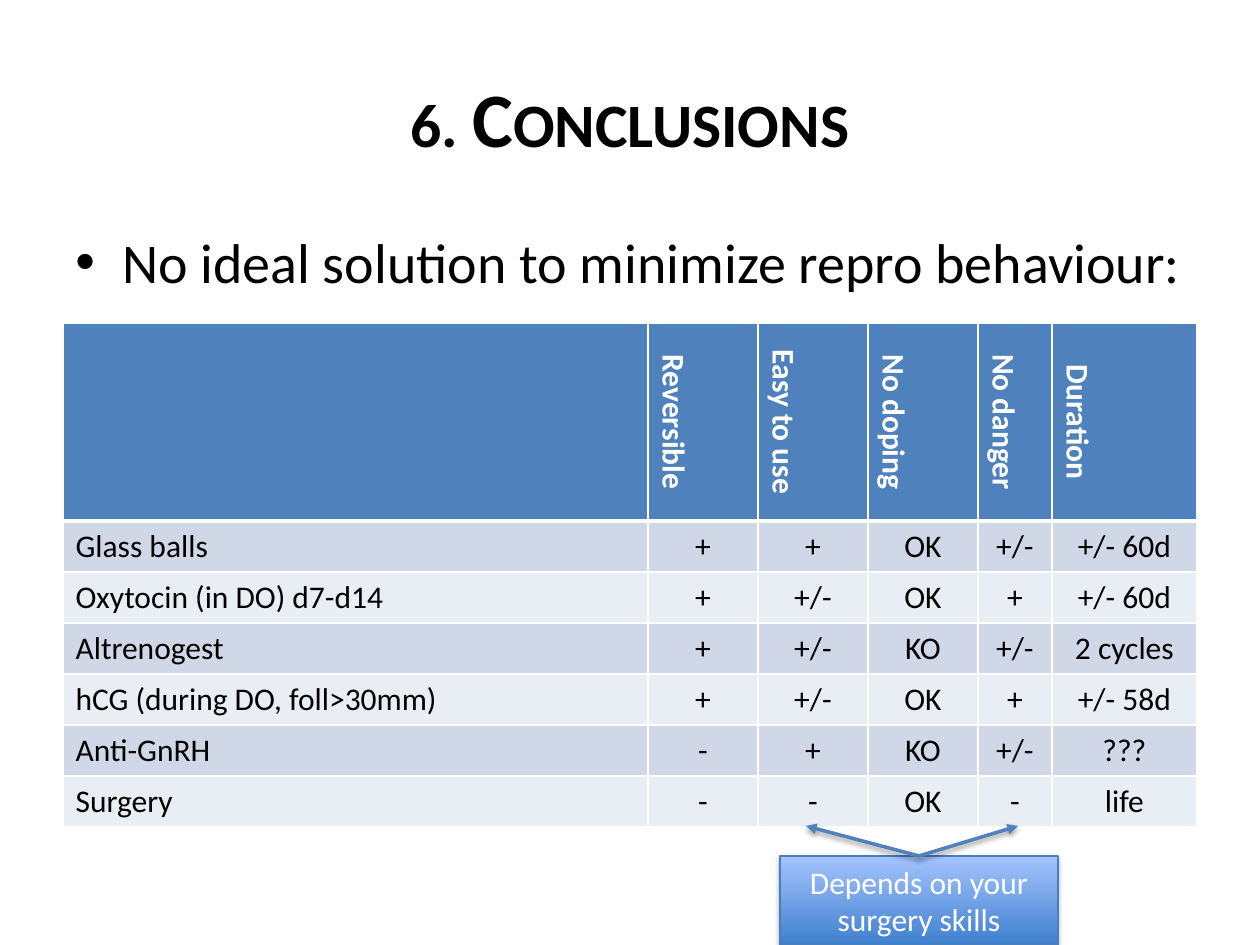
from lxml import etree
from pptx import Presentation
from pptx.dml.color import RGBColor
from pptx.enum.shapes import MSO_CONNECTOR, MSO_SHAPE
from pptx.enum.text import MSO_ANCHOR, PP_ALIGN
from pptx.oxml.ns import qn
from pptx.util import Emu, Pt

LEFT, CENTER = PP_ALIGN.LEFT, PP_ALIGN.CENTER
TOP, MIDDLE = MSO_ANCHOR.TOP, MSO_ANCHOR.MIDDLE
RECT, STRAIGHT = MSO_SHAPE.RECTANGLE, MSO_CONNECTOR.STRAIGHT
BLACK = RGBColor(0x00, 0x00, 0x00)
WHITE = RGBColor(0xFF, 0xFF, 0xFF)
BLUE = RGBColor(0x4F, 0x81, 0xBD)
EDGE = RGBColor(0x4B, 0x7E, 0xBC)
DEEP = RGBColor(0x3F, 0x80, 0xCE)
PALE = RGBColor(0xA4, 0xC4, 0xFF)
BANDS = RGBColor(0xD0, 0xD8, 0xE8), RGBColor(0xE9, 0xED, 0xF4)
SCALE = 914400 / 126

COLS = [585, 110, 110, 110, 74, 145]
ROWS = [198] + [51] * 6
DATA = [
    ["", "Reversible", "Easy to use", "No doping", "No danger", "Duration"],
    ["Glass balls", "+", "+", "OK", "+/-", "+/- 60d"],
    ["Oxytocin (in DO) d7-d14", "+", "+/-", "OK", "+", "+/- 60d"],
    ["Altrenogest", "+", "+/-", "KO", "+/-", "2 cycles"],
    ["hCG (during DO, foll>30mm)", "+", "+/-", "OK", "+", "+/- 58d"],
    ["Anti-GnRH", "-", "+", "KO", "+/-", "???"],
    ["Surgery", "-", "-", "OK", "-", "life"],
]


def px(*vals):
    """Turn px lengths into EMU."""
    return [Emu(round(val * SCALE)) for val in vals]


def node(parent, tag, **attrs):
    """Add a child element with attributes."""
    return etree.SubElement(parent, qn(tag), {key: str(val) for key, val in attrs.items()})


class Deck:
    """Holds the style and the current slide."""

    font = "Calibri"

    def __init__(self, wide, high):
        self.prs = Presentation()
        self.prs.slide_width, self.prs.slide_height = px(wide, high)
        self.slide = self.prs.slides.add_slide(self.prs.slide_layouts[6])
        self.shapes = self.slide.shapes

    def label(self, frame, text, size, color=BLACK, bold=False, align=LEFT):
        """Fill a text frame with one styled paragraph."""
        frame.text = text
        para = frame.paragraphs[0]
        para.alignment = align
        for run in para.runs:
            run.font.name, run.font.size = self.font, Pt(size)
            run.font.bold, run.font.color.rgb = bold, color
        return para

    def text(self, box, text, size, anchor=TOP, **style):
        """Add a wrapping text box and return its paragraph."""
        frame = self.shapes.add_textbox(*px(*box)).text_frame
        frame.word_wrap, frame.vertical_anchor = True, anchor
        return self.label(frame, text, size, **style)

    def title(self, box, text):
        """Add a bold title in small capitals."""
        para = self.text(box, text, 44, MIDDLE, bold=True, align=CENTER)
        para.runs[0].font._element.set("cap", "small")

    def bullet(self, box, text):
        """Add a bulleted line."""
        props = self.text(box, text, 32)._p.get_or_add_pPr()
        indent = px(47)[0]
        props.set("marL", str(indent))
        props.set("indent", str(-indent))
        node(props, "a:buFont", typeface="Arial")
        node(props, "a:buChar", char="•")

    def shade(self, shape, alpha):
        """Cast a soft shadow straight down."""
        props = shape._element.spPr
        effects = props.find(qn("a:effectLst"))
        if effects is None:
            effects = node(props, "a:effectLst")
        cast = node(effects, "a:outerShdw", blurRad=Pt(3.1), dist=Pt(1.7),
                    dir=5400000, rotWithShape=0)
        color = node(cast, "a:srgbClr", val=BLACK)
        node(color, "a:alpha", val=alpha * 1000)

    def border(self, cell, base):
        """Draw white cell edges."""
        props = cell._tc.get_or_add_tcPr()
        for side, width in zip("LRTB", (1, 1, 1, base)):
            line = node(props, f"a:ln{side}", w=Pt(width))
            node(node(line, "a:solidFill"), "a:srgbClr", val=WHITE)

    def table(self, left, top, cols, rows, data):
        """Add a banded table with an upright header."""
        grid = self.shapes.add_table(len(rows), len(cols),
                                     *px(left, top, sum(cols), sum(rows))).table
        for col, wide in zip(grid.columns, px(*cols)):
            col.width = wide
        for row, high in zip(grid.rows, px(*rows)):
            row.height = high
        for i, line in enumerate(data):
            head = i == 0
            for j, text in enumerate(line):
                cell = grid.cell(i, j)
                self.border(cell, 3 if head else 1)
                cell.fill.solid()
                cell.fill.fore_color.rgb = BLUE if head else BANDS[(i - 1) % 2]
                if head and j:
                    cell.vertical_anchor = MIDDLE
                    cell._tc.get_or_add_tcPr().set("vert", "vert")
                self.label(cell.text_frame, text, 18, WHITE if head else BLACK,
                           head, CENTER if j else LEFT)

    def note(self, box, text):
        """Add a shaded callout box."""
        shape = self.shapes.add_shape(RECT, *px(*box))
        shape.shadow.inherit = False
        shape.fill.gradient()
        shape.fill.gradient_angle = 90
        for stop, color in zip(shape.fill.gradient_stops, (DEEP, PALE)):
            stop.color.rgb = color
        shape.line.color.rgb, shape.line.width = EDGE, Pt(0.75)
        self.shade(shape, 35)
        shape.text_frame.word_wrap = True
        self.label(shape.text_frame, text, 18, WHITE, align=CENTER)
        return shape

    def arrow(self, start, end):
        """Draw an arrow from the top of a box to a point."""
        line = self.shapes.add_connector(STRAIGHT, 0, 0, *px(*end))
        line.begin_connect(start, 0)
        line.line.color.rgb, line.line.width = BLUE, Pt(2)
        node(line._element.spPr.find(qn("a:ln")), "a:tailEnd", type="triangle")
        self.shade(line, 38)


def main():
    """Build the slide."""
    deck = Deck(1260, 945)
    deck.title((63, 38, 1134, 157), "6. Conclusions")
    deck.bullet((63, 221, 1134, 102), "No ideal solution to minimize repro behaviour:")
    deck.table(63, 323, COLS, ROWS, DATA)
    note = deck.note((780, 856, 278, 89), "Depends on your surgery skills")
    for tip in (806, 826), (1018, 826):
        deck.arrow(note, tip)
    deck.prs.save("out.pptx")


if __name__ == "__main__":
    main()
